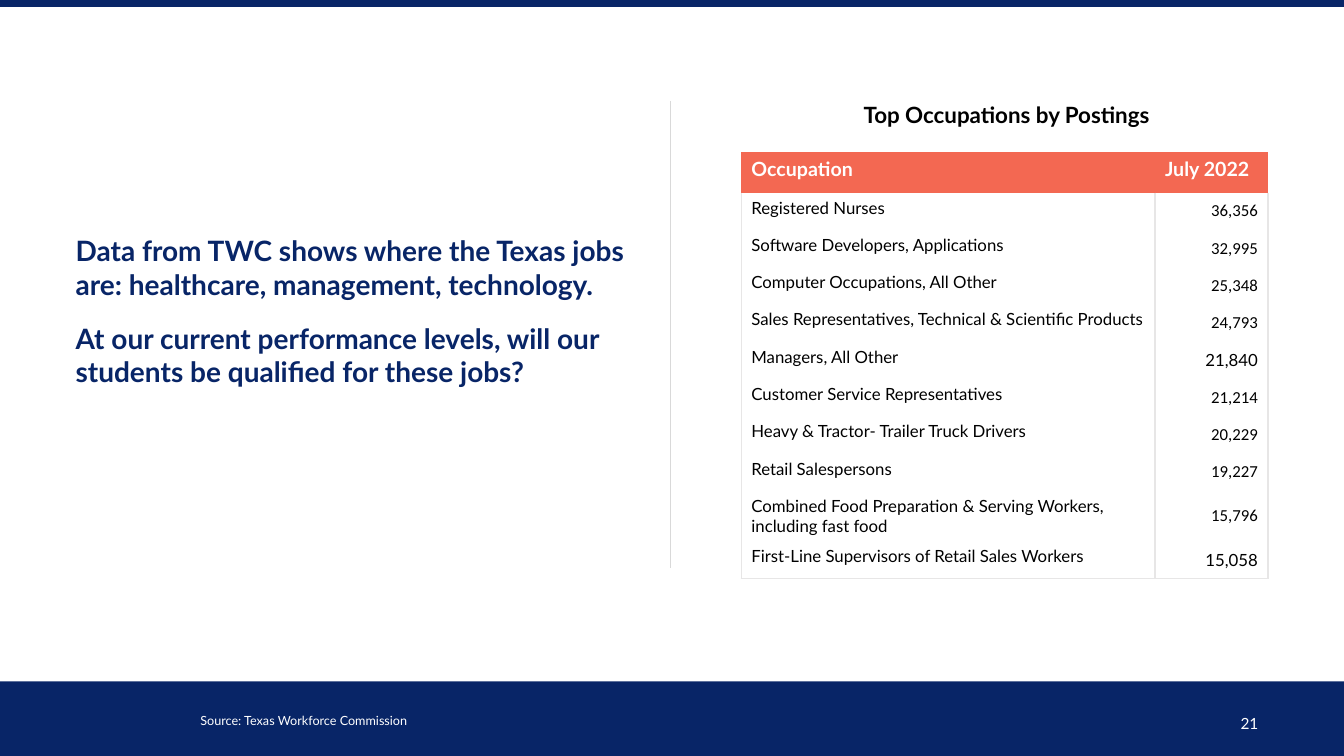
from lxml.etree import SubElement
from pptx import Presentation
from pptx.dml.color import RGBColor
from pptx.enum.shapes import MSO_CONNECTOR, MSO_SHAPE
from pptx.enum.text import MSO_ANCHOR, PP_ALIGN
from pptx.oxml.ns import qn
from pptx.util import Pt

NAVY, CORAL, WHITE, BLACK = "082567", "F36852", "FFFFFF", "000000"
GREY, RULE = "E7E6E6", "D9D9D9"
JOBS = [
    ("Registered Nurses", "36,356", "Calibri"),
    ("Software Developers, Applications", "32,995", "Calibri"),
    ("Computer Occupations, All Other", "25,348", "Calibri"),
    ("Sales Representatives, Technical & Scientific Products", "24,793", "Calibri"),
    ("Managers, All Other", "21,840", "Lato"),
    ("Customer Service Representatives", "21,214", "Calibri"),
    ("Heavy & Tractor- Trailer Truck Drivers", "20,229", "Calibri"),
    ("Retail Salespersons", "19,227", "Calibri"),
    ("Combined Food Preparation & Serving Workers, including fast food", "15,796", "Calibri"),
    ("First-Line Supervisors of Retail Sales Workers", "15,058", "Lato"),
]


def paint(color, value):
    color.rgb = RGBColor.from_string(value)


def format_all(item, values):
    for name, value in values.items():
        setattr(item, name, value)


def write(par, text, size, color, bold=False, face="Lato", align=PP_ALIGN.LEFT):
    run = par.add_run()
    run.text = text
    par.alignment = align
    format_all(run.font, {"name": face, "size": Pt(size), "bold": bold})
    paint(run.font.color, color)


def add_band(slide, top, height):
    band = slide.shapes.add_shape(MSO_SHAPE.RECTANGLE, 0, Pt(top), Pt(960), Pt(height))
    band.shadow.inherit = False
    band.fill.solid()
    paint(band.fill.fore_color, NAVY)
    band.line.fill.background()


def add_text(slide, area, lines, size, color, inset=(0, 0), gap=0,
             anchor=MSO_ANCHOR.TOP, **style):
    frame = slide.shapes.add_textbox(*map(Pt, area)).text_frame
    side, edge = map(Pt, inset)
    format_all(frame, {"word_wrap": True, "vertical_anchor": anchor,
                       "margin_left": side, "margin_right": side,
                       "margin_top": edge, "margin_bottom": edge})
    for index, line in enumerate(lines):
        par = frame.add_paragraph() if index else frame.paragraphs[0]
        if index:
            par.space_before = Pt(gap)
        write(par, line, size, color, **style)


def add_rule(slide, left, top, bottom):
    rule = slide.shapes.add_connector(
        MSO_CONNECTOR.STRAIGHT, Pt(left), Pt(top), Pt(left), Pt(bottom))
    rule.line.width = Pt(0.75)
    paint(rule.line.color, RULE)
    SubElement(rule._element.spPr, qn("a:effectLst"))


def edge_cell(cell, sides):
    props = cell._tc.get_or_add_tcPr()
    for side in "LRTB":
        line = SubElement(props, qn("a:ln" + side), w=str(Pt(1)))
        if side in sides:
            fill = SubElement(line, qn("a:solidFill"))
            SubElement(fill, qn("a:srgbClr"), val=GREY)
        else:
            SubElement(line, qn("a:noFill"))


def fill_cell(cell, text, fill, sides, anchor, **style):
    edge_cell(cell, sides)
    cell.fill.solid()
    paint(cell.fill.fore_color, fill)
    cell.vertical_anchor = anchor
    write(cell.text_frame.paragraphs[0], text, **style)


def add_jobs(slide):
    table = slide.shapes.add_table(
        len(JOBS) + 1, 2, Pt(529.5), Pt(108.7), Pt(376.2), Pt(304.6)).table
    format_all(table, {"first_row": False, "horz_banding": False})
    for col, width in zip(table.columns, (295.5, 80.7)):
        col.width = Pt(width)
    for row, height in zip(table.rows, [28.8] + [26.64] * 8 + [36, 26.64]):
        row.height = Pt(height)
    for col, text in enumerate(("Occupation", "July 2022")):
        fill_cell(table.cell(0, col), text, CORAL, "", MSO_ANCHOR.TOP,
                  size=14, color=WHITE, bold=True)
    for row, (job, count, face) in enumerate(JOBS, 1):
        sides = "LRB" if row == len(JOBS) else "LR"
        fill_cell(table.cell(row, 0), job, WHITE, sides, MSO_ANCHOR.TOP,
                  size=12, color=BLACK)
        fill_cell(table.cell(row, 1), count, WHITE, sides, MSO_ANCHOR.MIDDLE,
                  size=12, color=BLACK, face=face, align=PP_ALIGN.RIGHT)


def main():
    deck = Presentation()
    format_all(deck, {"slide_width": Pt(960), "slide_height": Pt(540)})
    slide = deck.slides.add_slide(deck.slide_layouts[6])
    add_band(slide, 486.7, 53.3)
    add_band(slide, 0, 5)
    add_text(slide, (690, 502, 216, 28.8), ["21"], 11, WHITE, (7.2, 3.6),
             anchor=MSO_ANCHOR.MIDDLE, align=PP_ALIGN.RIGHT)
    add_text(slide, (54, 167, 393, 62), [
        "Data from TWC shows where the Texas jobs are: healthcare, management, technology.",
        "At our current performance levels, will our students be qualified for these jobs?",
    ], 20, NAVY, gap=14.4, bold=True)
    add_text(slide, (136, 506, 189.5, 18), ["Source: Texas Workforce Commission"],
             9, WHITE, (7.2, 3.6))
    add_text(slide, (530, 72, 378, 28.8), ["Top Occupations by Postings"],
             16, BLACK, bold=True, align=PP_ALIGN.CENTER)
    add_rule(slide, 478.8, 72, 406)
    add_jobs(slide)
    deck.save("out.pptx")


if __name__ == "__main__":
    main()
